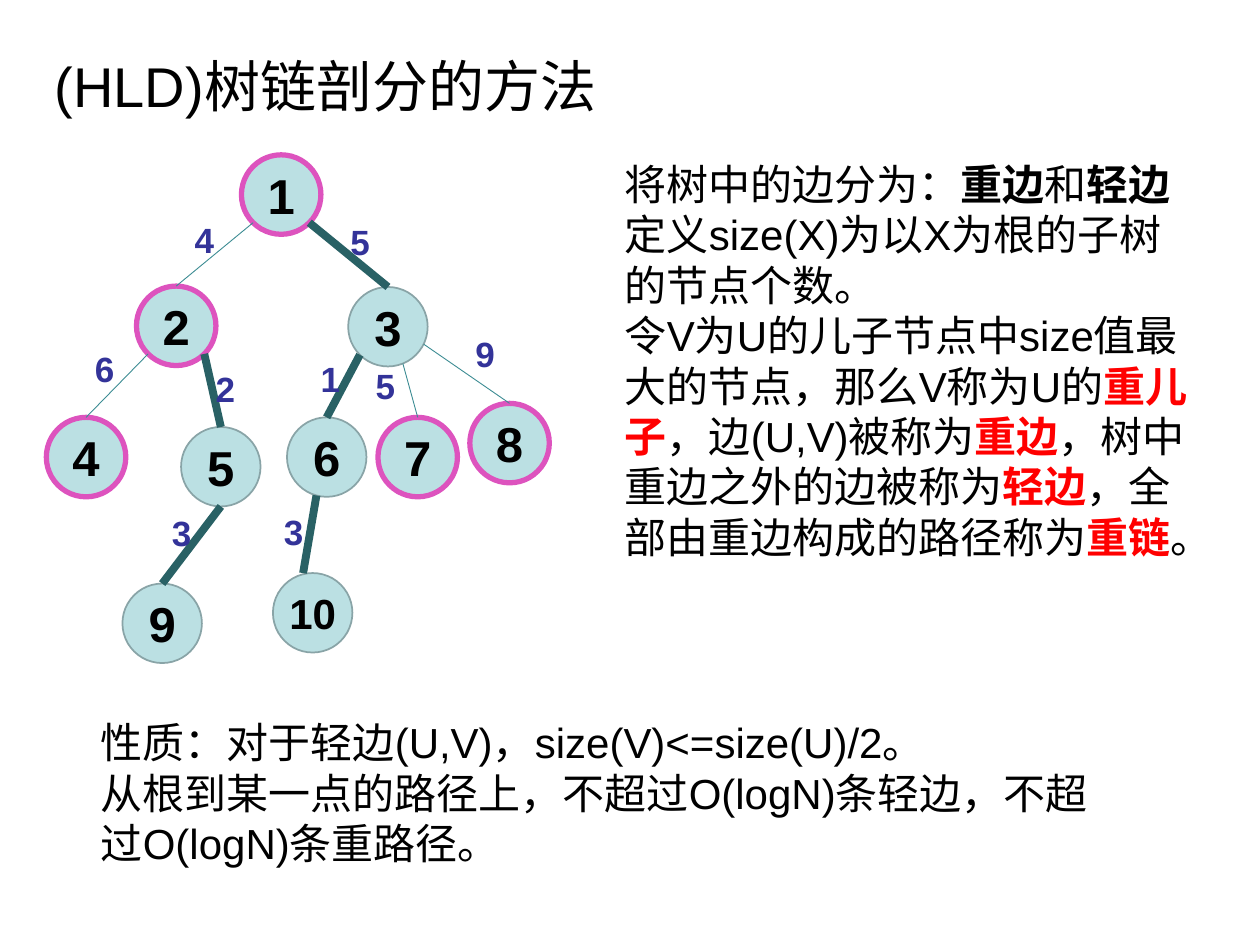
from math import cos, radians, sin
from lxml.etree import SubElement
from pptx import Presentation
from pptx.dml.color import RGBColor as Rgb
from pptx.enum.shapes import MSO_CONNECTOR as Link, MSO_SHAPE as Shape
from pptx.enum.text import MSO_ANCHOR as Anchor, MSO_AUTO_SIZE as Fit, PP_ALIGN as Align
from pptx.oxml.ns import qn
from pptx.util import Pt

HUES = {
    "text": "000000", "key": "FF0000", "weight": "333399", "fill": "BBE0E3",
    "head": "DD53BE", "rim": "89A4A7", "light": "3C8C93", "heavy": "296165",
}
SIZE = 45.4
TAG = 31.5

TITLE = "(HLD)树链剖分的方法"
RULES = [
    ["将树中的边分为：", ("重边", "text"), "和", ("轻边", "text")],
    ["定义size(X)为以X为根的子树的节点个数。"],
    ["令V为U的儿子节点中size值最大的节点，那么V称为U的", ("重儿子", "key"),
     "，边(U,V)被称为", ("重边", "key"), "，树中重边之外的边被称为",
     ("轻边", "key"), "，全部由重边构成的路径称为", ("重链", "key"), "。"],
]
FACTS = [
    ["性质：对于轻边(U,V)，size(V)<=size(U)/2。"],
    ["从根到某一点的路径上，不超过O(logN)条轻边，不超过O(logN)条重路径。"],
]

NODES = {
    1: (138, 88.5), 2: (78, 163.5), 3: (199, 164), 4: (26.5, 238.5),
    5: (103.5, 244), 6: (164, 238.5), 7: (216, 238.5), 8: (268.5, 230.5),
    10: (156, 327.5), 9: (70, 333.5),
}
HEADS = {1, 2, 4, 7, 8}

# parent, child, exit angle, shift at child, heavy, weight, label left, label top
EDGES = [
    (1, 2, 135, 0, False, 4, 101, 121.5),
    (1, 3, 45, 0, True, 5, 190, 122.5),
    (2, 4, 135, 0, False, 6, 44, 195),
    (2, 5, 45, 0, True, 2, 113, 206.5),
    (5, 9, 90, 0, True, 3, 88, 288.5),
    (3, 6, 135, 0, True, 1, 173, 201),
    (3, 7, 68, 0, False, 5, 204.5, 205),
    (3, 8, 26, 0, False, 9, 261.5, 186.5),
    (6, 10, 105, -5.5, True, 3, 152, 288),
]


def write(frame, paras, size=24, hue="text", bold=False, align=Align.LEFT,
          anchor=Anchor.TOP, inset=None):
    frame.word_wrap = True
    frame.auto_size = Fit.NONE
    frame.vertical_anchor = anchor
    if inset is not None:
        frame.margin_left = frame.margin_right = Pt(inset)
        frame.margin_top = frame.margin_bottom = Pt(inset)
    for i, parts in enumerate(paras):
        para = frame.add_paragraph() if i else frame.paragraphs[0]
        para.alignment = align
        for part in parts:
            plain = isinstance(part, str)
            words, tint = (part, hue) if plain else part
            run = para.add_run()
            run.text = words
            run.font.name = "Arial"
            run.font.size = Pt(size)
            run.font.bold = bold or not plain
            run.font.color.rgb = Rgb.from_string(HUES[tint])


class Board:
    def __init__(self, slide, hues):
        self.slide = slide
        self.hues = hues

    def tint(self, name):
        return Rgb.from_string(self.hues[name])

    def title(self, words, x, y, w, h):
        box = self.slide.shapes.title
        box.left, box.top, box.width, box.height = Pt(x), Pt(y), Pt(w), Pt(h)
        write(box.text_frame, [[words]], size=32)

    def text(self, paras, x, y, w, h, **style):
        box = self.slide.shapes.add_textbox(Pt(x), Pt(y), Pt(w), Pt(h))
        write(box.text_frame, paras, **style)

    def node(self, name, x, y, head):
        dot = self.slide.shapes.add_shape(Shape.OVAL, Pt(x), Pt(y), Pt(SIZE), Pt(SIZE))
        dot.shadow.inherit = False
        dot.fill.solid()
        dot.fill.fore_color.rgb = self.tint("fill")
        dot.line.color.rgb = self.tint("head" if head else "rim")
        dot.line.width = Pt(3 if head else 1)
        write(dot.text_frame, [[str(name)]], size=28 if name < 10 else 24, bold=True,
              align=Align.CENTER, anchor=Anchor.MIDDLE, inset=0)

    def edge(self, start, end, angle, shift, heavy):
        half = SIZE / 2
        turn = radians(angle)
        x1 = start[0] + half + half * cos(turn)
        y1 = start[1] + half + half * sin(turn)
        x2, y2 = end[0] + half + shift, end[1]
        line = self.slide.shapes.add_connector(Link.STRAIGHT, Pt(x1), Pt(y1), Pt(x2), Pt(y2))
        line.line.color.rgb = self.tint("heavy" if heavy else "light")
        line.line.width = Pt(4.5 if heavy else 0.5)
        SubElement(line._element.spPr, qn("a:effectLst"))


def main():
    deck = Presentation()
    deck.slide_width, deck.slide_height = Pt(720), Pt(540)
    board = Board(deck.slides.add_slide(deck.slide_layouts[5]), HUES)

    board.title(TITLE, 24, 26, 394, 45.5)
    board.text(RULES, 350, 87, 335.5, 295)
    board.text(FACTS, 50.5, 406, 579.5, 94.5)

    for name, (x, y) in NODES.items():
        board.node(name, x, y, name in HEADS)
    for top, low, angle, shift, heavy, *_ in EDGES:
        board.edge(NODES[top], NODES[low], angle, shift, heavy)
    for *_, weight, x, y in EDGES:
        board.text([[str(weight)]], x, y, TAG, TAG, size=20, hue="weight",
                   bold=True, align=Align.CENTER)

    deck.save("out.pptx")


if __name__ == "__main__":
    main()
